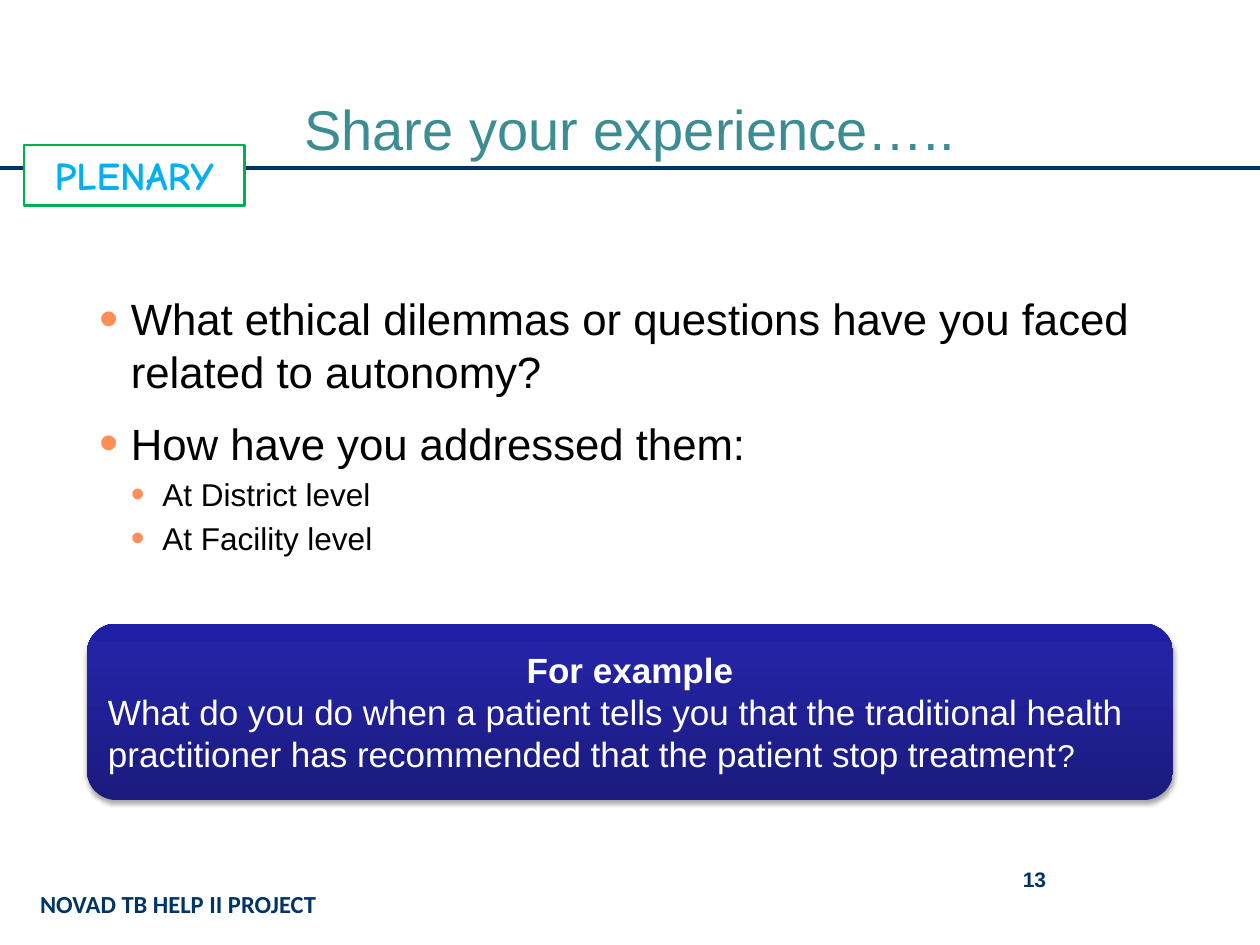
from lxml import etree
from pptx import Presentation
from pptx.dml.color import RGBColor
from pptx.enum import shapes, text
from pptx.oxml import parse_xml
from pptx.oxml.ns import nsdecls, qn
from pptx.util import Inches, Pt

COLORS = {
    "navy": "003366", "teal": "3C8C93", "bullet": "FF8E57", "black": "000000",
    "white": "FFFFFF", "green": "00B050", "sky": "00B0F0",
    "deep": "1B1B7E", "indigo": "2323A3", "bright": "2020A6",
}
CENTER = text.PP_ALIGN.CENTER


def color(name):
    return RGBColor.from_string(COLORS[name])


def add_run(paragraph, wording, size, tint, bold=False, name="Arial"):
    run = paragraph.add_run()
    run.text = wording
    formats = {"size": Pt(size), "bold": bold, "name": name}
    for attribute, value in formats.items():
        setattr(run.font, attribute, value)
    run.font.color.rgb = color(tint)


prs = Presentation()
prs.slide_width, prs.slide_height = Inches(10), Inches(7.5)
slide = prs.slides.add_slide(prs.slide_layouts[6])

rule = slide.shapes.add_connector(
    shapes.MSO_CONNECTOR.STRAIGHT, Inches(0), Inches(1.33), Inches(10), Inches(1.33))
rule.line.color.rgb = color("navy")
rule.line.width = Pt(2.25)
etree.SubElement(rule._element.spPr, qn("a:effectLst"))

labels = [
    ((0.22, 7.01, 3.33, 0.33), "NOVAD TB HELP II PROJECT", 14, "navy", True, "Calibri",
     text.PP_ALIGN.LEFT, text.MSO_ANCHOR.TOP),
    ((0.5, 0.25, 9, 1.08), "Share your experience…..", 32, "teal", False, "Arial",
     CENTER, text.MSO_ANCHOR.BOTTOM),
    ((7.17, 6.83, 2.08, 0.5), "13", 12, "navy", True, "Arial",
     CENTER, text.MSO_ANCHOR.TOP),
]
for box, wording, size, tint, bold, name, align, anchor in labels:
    label = slide.shapes.add_textbox(*map(Inches, box)).text_frame
    label.word_wrap = True
    label.vertical_anchor = anchor
    label.paragraphs[0].alignment = align
    add_run(label.paragraphs[0], wording, size, tint, bold, name)

questions = slide.shapes.add_textbox(
    Inches(0.69), Inches(2.27), Inches(8.62), Inches(2.04)).text_frame
questions.word_wrap = True
points = [
    (0, "What ethical dilemmas or questions have you faced related to autonomy?", 25, 6),
    (0, "How have you addressed them:", 25, 0),
    (1, "At District level", 18, 0),
    (1, "At Facility level", 18, 0),
]
for index, (level, wording, size, after) in enumerate(points):
    point = questions.add_paragraph() if index else questions.paragraphs[0]
    formats = {"level": level, "space_before": Pt(size * 0.2), "space_after": Pt(after)}
    for attribute, value in formats.items():
        setattr(point, attribute, value)
    properties = point._p.get_or_add_pPr()
    properties.set("marL", str(Inches(0.25 * (level + 1))))
    properties.set("indent", str(Inches(-0.25)))
    bullet_color = etree.SubElement(properties, qn("a:buClr"))
    etree.SubElement(bullet_color, qn("a:srgbClr"), val=COLORS["bullet"])
    etree.SubElement(properties, qn("a:buSzPct"), val="125000")
    etree.SubElement(properties, qn("a:buFont"), typeface="Arial")
    etree.SubElement(properties, qn("a:buChar"), char="•")
    add_run(point, wording, size, "black")

plenary = slide.shapes.add_shape(
    shapes.MSO_SHAPE.RECTANGLE, Inches(0.19), Inches(1.15), Inches(1.75), Inches(0.48))
plenary.shadow.inherit = False
plenary.fill.solid()
plenary.fill.fore_color.rgb = color("white")
plenary.line.color.rgb = color("green")
plenary.line.width = Pt(1.5)
plenary.text_frame.vertical_anchor = text.MSO_ANCHOR.TOP
plenary.text_frame.paragraphs[0].alignment = CENTER
add_run(plenary.text_frame.paragraphs[0], "PLENARY", 22.5, "sky", True, "Comic Neue")

example = slide.shapes.add_shape(
    shapes.MSO_SHAPE.ROUNDED_RECTANGLE, Inches(0.69), Inches(4.95), Inches(8.62), Inches(1.4))
example.shadow.inherit = False
example.line.fill.background()
stops = "".join(
    f'<a:gs pos="{place * 1000}"><a:srgbClr val="{COLORS[tint]}"/></a:gs>'
    for place, tint in [(0, "deep"), (80, "indigo"), (100, "bright")])
gradient = parse_xml(
    f'<a:gradFill {nsdecls("a")} rotWithShape="1"><a:gsLst>{stops}</a:gsLst>'
    '<a:lin ang="16200000" scaled="0"/></a:gradFill>')
example._element.spPr.find(qn("a:prstGeom")).addnext(gradient)
shadow = parse_xml(
    f'<a:outerShdw {nsdecls("a")} blurRad="{Pt(3.1)}" dist="{Pt(1.8)}" dir="5400000" '
    f'rotWithShape="0"><a:srgbClr val="{COLORS["black"]}"><a:alpha val="35000"/>'
    '</a:srgbClr></a:outerShdw>')
example._element.spPr.find(qn("a:effectLst")).append(shadow)

story = example.text_frame
story.word_wrap = True
story.vertical_anchor = text.MSO_ANCHOR.MIDDLE
heading, scenario = story.paragraphs[0], story.add_paragraph()
heading.alignment = CENTER
scenario.alignment = text.PP_ALIGN.LEFT
add_run(heading, "For example", 20, "white", True)
add_run(scenario, "What do you do when a patient tells you that the traditional health "
        "practitioner has recommended that the patient stop treatment", 20, "white")
add_run(scenario, "?", 18, "white")

prs.save("out.pptx")
